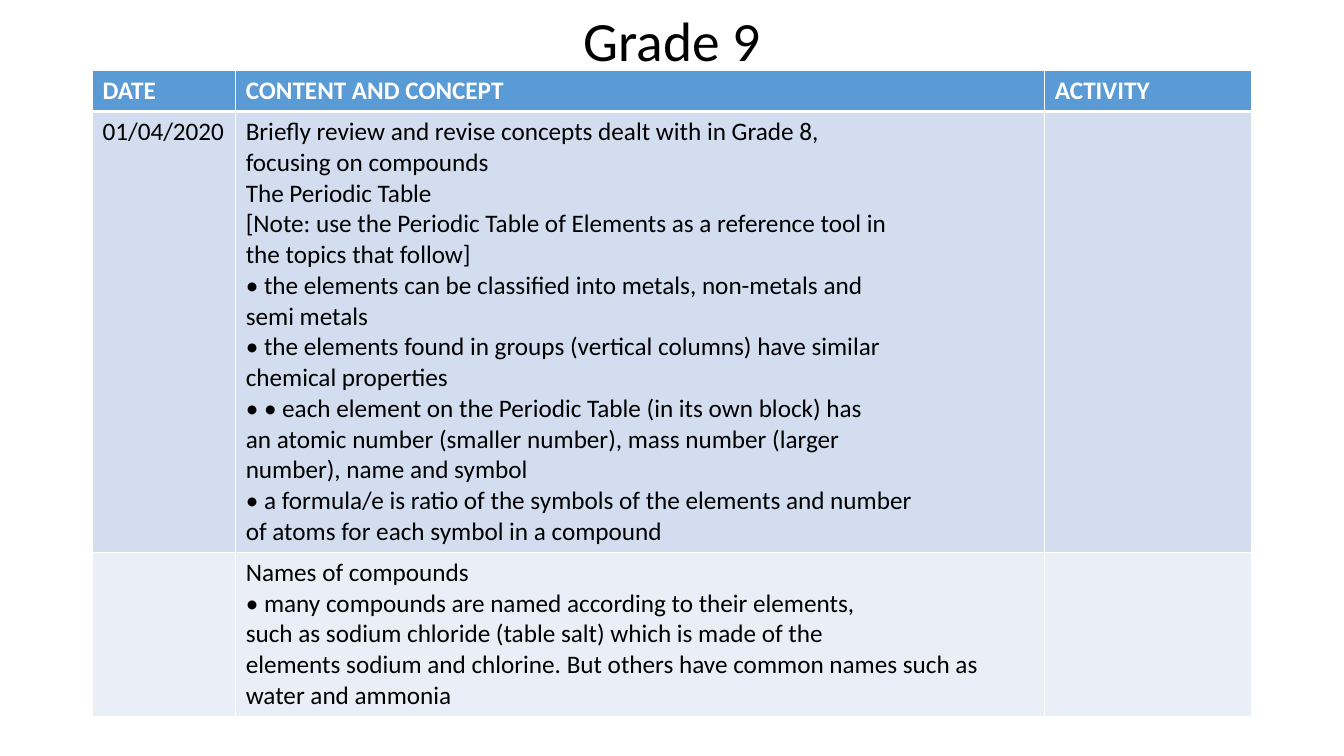
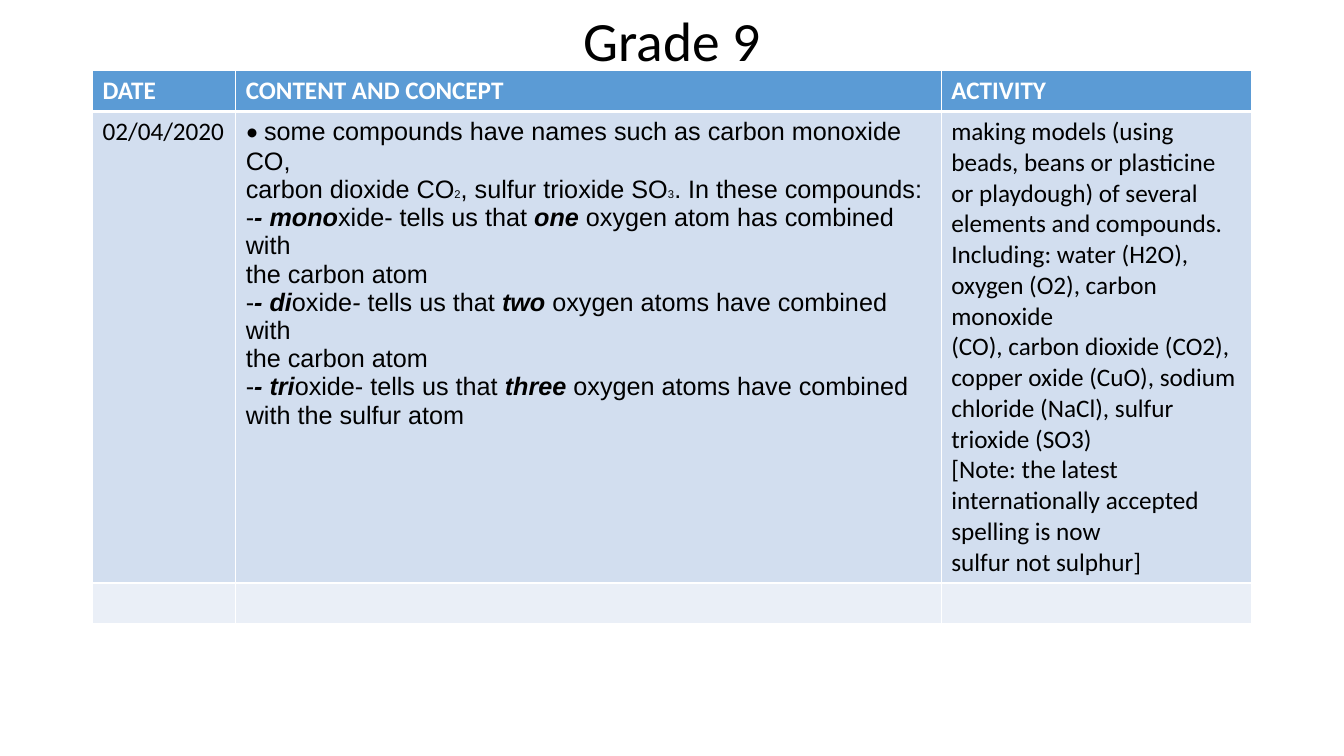
from dataclasses import dataclass
from functools import partial

from lxml.etree import SubElement
from pptx import Presentation
from pptx.dml.color import RGBColor
from pptx.enum.text import MSO_ANCHOR, MSO_AUTO_SIZE, PP_ALIGN
from pptx.oxml.ns import qn
from pptx.util import Cm, Pt


def color(hex_string):
    return RGBColor.from_string(hex_string)


@dataclass
class Run:
    text: str
    font: str = "Calibri"
    bold: bool = False
    italic: bool = False
    size: float = 18


arial = partial(Run, font="Arial")
strong = partial(arial, bold=True, italic=True)
small = partial(arial, size=8)


class LessonPlan:
    BLACK, WHITE = "000000", "FFFFFF"
    HEADER_FILL = "5B9BD5"
    BODY_FILLS = ("D2DEEF", "EAEFF7")
    HEADINGS = ("DATE", "CONTENT AND CONCEPT", "ACTIVITY")
    LEFT, WIDTH = 2.33, 29.21
    TITLE_TOP, TABLE_TOP = 0.41, 1.78
    DATE_WIDTH, HEADER_HEIGHT = 3.61, 1.03
    THIN, THICK = 1, 3

    def __init__(self):
        self.presentation = Presentation()
        self.presentation.slide_width = Cm(33.87)
        self.presentation.slide_height = Cm(19.05)
        self.slide = None

    def add_slide(self, title):
        self.slide = self.presentation.slides.add_slide(self.presentation.slide_layouts[5])
        shape = self.slide.shapes.title
        shape.left, shape.top = Cm(self.LEFT), Cm(self.TITLE_TOP)
        shape.width, shape.height = Cm(self.WIDTH), Cm(self.TABLE_TOP - self.TITLE_TOP)
        text_frame = shape.text_frame
        text_frame.auto_size = MSO_AUTO_SIZE.NONE
        text_frame.vertical_anchor = MSO_ANCHOR.MIDDLE
        paragraph = text_frame.paragraphs[0]
        paragraph.alignment = PP_ALIGN.CENTER
        paragraph.line_spacing = 0.9
        self.add_run(paragraph, Run(title, size=39.6), self.BLACK)

    def add_run(self, paragraph, part, text_color):
        run = paragraph.add_run()
        run.text = part.text
        run.font.name, run.font.size = part.font, Pt(part.size)
        run.font.bold, run.font.italic = part.bold, part.italic
        run.font.color.rgb = color(text_color)

    def set_borders(self, cell, top, bottom):
        properties = cell._tc.get_or_add_tcPr()
        for side, points in zip("LRTB", (self.THIN, self.THIN, top, bottom)):
            line = SubElement(properties, qn(f"a:ln{side}"), w=str(Pt(points)))
            fill = SubElement(line, qn("a:solidFill"))
            SubElement(fill, qn("a:srgbClr"), val=self.WHITE)

    def fill_cell(self, cell, lines, fill, text_color):
        """Write one paragraph per line; a line is a list of runs."""
        cell.fill.solid()
        cell.fill.fore_color.rgb = color(fill)
        for index, line in enumerate(lines):
            text_frame = cell.text_frame
            paragraph = text_frame.add_paragraph() if index else text_frame.paragraphs[0]
            for part in line:
                self.add_run(paragraph, part, text_color)

    def add_table(self, activity_width, body_heights, body_rows):
        """Add the plan table; each body cell is a list of lines."""
        heights = [self.HEADER_HEIGHT, *body_heights]
        widths = [self.DATE_WIDTH, self.WIDTH - self.DATE_WIDTH - activity_width, activity_width]
        table = self.slide.shapes.add_table(
            len(heights), len(widths), Cm(self.LEFT), Cm(self.TABLE_TOP),
            Cm(self.WIDTH), Cm(sum(heights))).table
        table.horz_banding = False
        for column, width in zip(table.columns, widths):
            column.width = Cm(width)
        header = [[[Run(heading, bold=True)]] for heading in self.HEADINGS]
        for index, cells in enumerate([header, *body_rows]):
            table.rows[index].height = Cm(heights[index])
            fill = self.BODY_FILLS[(index - 1) % 2] if index else self.HEADER_FILL
            text_color = self.BLACK if index else self.WHITE
            top = self.THICK if index == 1 else self.THIN
            bottom = self.THIN if index else self.THICK
            for cell, lines in zip(table.rows[index].cells, cells):
                self.set_borders(cell, top, bottom)
                self.fill_cell(cell, lines, fill, text_color)

    def save(self):
        self.presentation.save("out.pptx")


def plain(*texts):
    return [[Run(text)] for text in texts]


PERIODIC_TABLE = plain(
    "Briefly review and revise concepts dealt with in Grade 8,",
    "focusing on compounds",
    "The Periodic Table",
    "[Note: use the Periodic Table of Elements as a reference tool in",
    "the topics that follow]",
    "• the elements can be classified into metals, non-metals and",
    "semi metals",
    "• the elements found in groups (vertical columns) have similar",
    "chemical properties",
    "• • each element on the Periodic Table (in its own block) has",
    "an atomic number (smaller number), mass number (larger",
    "number), name and symbol",
    "• a formula/e is ratio of the symbols of the elements and number",
    "of atoms for each symbol in a compound",
)
COMPOUND_NAMES = plain(
    "Names of compounds",
    "• many compounds are named according to their elements,",
    "such as sodium chloride (table salt) which is made of the",
    "elements sodium and chlorine. But others have common names such as water and ammonia",
)
OXIDE_NAMES = [
    [Run("• "), arial("some compounds have names such as carbon monoxide CO,")],
    [arial("carbon dioxide CO"), small("2"), arial(", sulfur trioxide SO"), small("3"),
     arial(". In these compounds:")],
    [arial("-"), strong("- mono"), arial("xide- tells us that "), strong("one "),
     arial("oxygen atom has combined with")],
    [arial("the carbon atom")],
    [arial("-"), strong("- di"), arial("oxide"), arial("- ", italic=True),
     arial("tells us that "), strong("two "), arial("oxygen atoms have combined with")],
    [arial("the carbon atom")],
    [arial("-"), strong("- tri"), arial("oxide- tells us that "), strong("three "),
     arial("oxygen atoms have combined")],
    [arial("with the sulfur atom")],
]
MODEL_ACTIVITY = plain(
    "making models (using beads, beans or plasticine",
    "or playdough) of several elements and compounds.",
    "Including: water (H2O), oxygen (O2), carbon monoxide",
    "(CO), carbon dioxide (CO2), copper oxide (CuO), sodium",
    "chloride (NaCl), sulfur trioxide (SO3)",
    "[Note: the latest internationally accepted spelling is now",
    "sulfur not sulphur]",
)


def main():
    plan = LessonPlan()
    plan.add_slide("Grade 9")
    plan.add_table(5.21, [11.08, 4.1], [
        [plain("01/04/2020"), PERIODIC_TABLE, []],
        [[], COMPOUND_NAMES, []],
    ])
    plan.add_slide("Grade 9")
    plan.add_table(7.82, [11.86, 1.03], [
        [plain("02/04/2020"), OXIDE_NAMES, MODEL_ACTIVITY],
        [[], [], []],
    ])
    plan.save()


if __name__ == "__main__":
    main()
